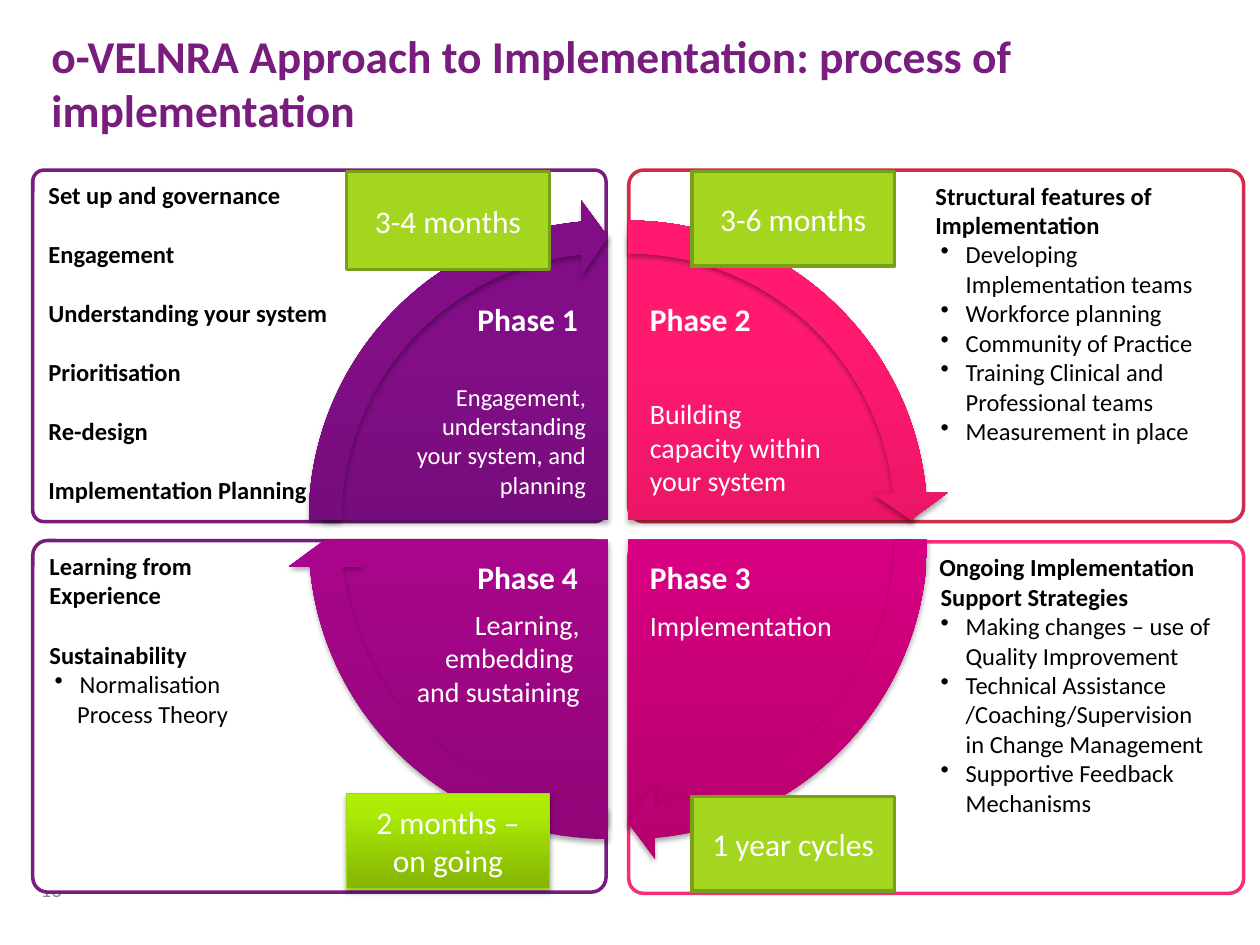
from dataclasses import dataclass
from pptx import Presentation
from pptx.dml.color import RGBColor
from pptx.enum.shapes import MSO_SHAPE as Preset
from pptx.enum.text import MSO_ANCHOR as Anchor, PP_ALIGN as Align
from pptx.oxml import parse_xml
from pptx.oxml.ns import nsdecls, qn
from pptx.util import Inches, Pt


@dataclass(frozen=True)
class Theme:
    font: str = "Calibri"
    purple: str = "781D7D"
    crimson: str = "CF2D47"
    pink: str = "F32F79"
    green: str = "A4D620"
    green_edge: str = "799E18"
    bright_edge: str = "A2D61B"
    bright: tuple = ("84B404", "ABEA05", "AEEF00")
    phases: tuple = (
        ("630B68", "810E87", "830C8A"),
        ("CB0D55", "FF1A70", "FF1B71"),
        ("B7006E", "ED008F", "EE008F"),
        ("8F0577", "BA079B", "BE049E"),
    )
    white: str = "FFFFFF"
    black: str = "000000"
    grey: str = "8C8C8C"
    title: int = 26
    heading: int = 18
    summary: int = 16
    body: int = 14
    small: int = 12


@dataclass(frozen=True)
class Line:
    text: str
    bold: bool = False
    margin: float = 0
    bullet: bool = False
    gap: int = 0


class Board:
    COLUMNS, ROWS = 100, 75

    def __init__(self, presentation, theme):
        self.theme = theme
        self.column = presentation.slide_width / self.COLUMNS
        self.row = presentation.slide_height / self.ROWS
        self.slide = presentation.slides.add_slide(presentation.slide_layouts[6])

    def place(self, box):
        left, top, width, height = box
        return (round(left * self.column), round(top * self.row),
                round(width * self.column), round(height * self.row))

    def style(self, paragraph, size, color, bold=False, align=Align.LEFT):
        font = paragraph.font
        font.name, font.size, font.bold = self.theme.font, Pt(size), bold
        font.color.rgb = RGBColor.from_string(color)
        paragraph.alignment = align

    def text(self, box, words, size, color, bold=False, align=Align.LEFT,
             wrap=True, anchor=Anchor.TOP):
        frame = self.slide.shapes.add_textbox(*self.place(box)).text_frame
        frame.word_wrap, frame.vertical_anchor = wrap, anchor
        frame.text = words
        self.style(frame.paragraphs[0], size, color, bold, align)

    def shape(self, preset, box, fill, edge=None, edge_width=2, adjustments=()):
        shape = self.slide.shapes.add_shape(preset, *self.place(box))
        for index, value in enumerate(adjustments):
            shape.adjustments[index] = value
        shape.shadow.inherit = False
        if isinstance(fill, tuple):
            self.glossy(shape, fill)
        else:
            shape.fill.solid()
            shape.fill.fore_color.rgb = RGBColor.from_string(fill)
        if edge:
            shape.line.color.rgb = RGBColor.from_string(edge)
            shape.line.width = Pt(edge_width)
        else:
            shape.line.fill.background()
        return shape

    def glossy(self, shape, colors):
        shape.fill.gradient()
        shape.fill.gradient_angle = 90
        properties = shape.element.spPr
        stops = properties.find(".//" + qn("a:gsLst"))
        stops.clear()
        for position, color in zip((0, 80, 100), colors):
            stops.append(parse_xml(
                f'<a:gs {nsdecls("a")} pos="{position * 1000}">'
                f'<a:srgbClr val="{color}"/></a:gs>'))
        properties.find(qn("a:effectLst")).append(parse_xml(
            f'<a:outerShdw {nsdecls("a")} blurRad="{Pt(3.1)}" dist="{Pt(1.8)}" '
            f'dir="5400000" rotWithShape="0"><a:srgbClr val="{self.theme.black}">'
            '<a:alpha val="35000"/></a:srgbClr></a:outerShdw>'))

    def panel(self, box, edge, corner, insets, lines):
        shape = self.shape(Preset.ROUNDED_RECTANGLE, box, self.theme.white, edge,
                           adjustments=(corner,))
        frame = shape.text_frame
        frame.word_wrap, frame.vertical_anchor = True, Anchor.TOP
        frame.margin_left, frame.margin_right = map(Inches, insets)
        for index, line in enumerate(lines):
            paragraph = frame.add_paragraph() if index else frame.paragraphs[0]
            paragraph.text = line.text
            paragraph.space_before = Pt(line.gap)
            self.style(paragraph, self.theme.body, self.theme.black, line.bold)
            properties = paragraph._p.get_or_add_pPr()
            properties.set("marL", str(Inches(line.margin)))
            properties.set("indent", str(Inches(-0.2 if line.bullet else 0)))
            if line.bullet:
                bullet = parse_xml(f'<a:buChar {nsdecls("a")} char="•"/>')
                properties.find(qn("a:defRPr")).addprevious(bullet)

    def wheel(self, left, top, gap, size, rim):
        quarter, head = 54, 3.275
        order = (1, 2, 3, 0)
        corners = [(left + gap * (phase in (1, 2)), top + gap * (phase in (2, 3)))
                   for phase in order]
        starts = [(108 + quarter * phase) % 216 for phase in order]
        for phase, (x, y), start in zip(order, corners, starts):
            self.shape(Preset.PIE, (x, y, size, size), self.theme.phases[phase],
                       adjustments=(start, (start + quarter) % 216))
        outer = size + 2 * rim
        for phase, (x, y), start in zip(order, corners, starts):
            self.shape(Preset.CIRCULAR_ARROW, (x - rim, y - rim, outer, outer),
                       self.theme.phases[phase],
                       adjustments=(0.051, head, start + quarter - head, start, 0.059))

    def duration(self, box, words, fill, edge, edge_width=2):
        shape = self.shape(Preset.RECTANGLE, box, fill, edge, edge_width)
        frame = shape.text_frame
        frame.word_wrap, frame.vertical_anchor = True, Anchor.MIDDLE
        frame.text = words
        self.style(frame.paragraphs[0], self.theme.heading, self.theme.white,
                   align=Align.CENTER)


def heads(*texts, margin=0, gap=0):
    return [Line(text, True, margin, gap=gap if index else 0)
            for index, text in enumerate(texts)]


def bullets(*texts, margin=0.55):
    return [Line(text, margin=margin, bullet=True) for text in texts]


def main():
    presentation = Presentation()
    presentation.slide_width, presentation.slide_height = Inches(10), Inches(7.5)
    theme = Theme()
    board = Board(presentation, theme)
    blank_line = 17
    left_insets, right_insets = (0.1, 0.63), (2.09, 0.2)

    board.text((1.2, 68.6, 4.7, 4), "16", theme.small, theme.grey,
               align=Align.RIGHT, anchor=Anchor.MIDDLE)
    board.panel((2.6, 42.9, 45.5, 27.9), theme.purple, 0.042, left_insets,
                heads("Learning from", "Experience")
                + [Line("Sustainability", True, gap=blank_line)]
                + bullets("Normalisation", margin=0.24)
                + [Line("Process Theory", margin=0.22)])
    board.panel((49.9, 43, 48.8, 27.9), theme.pink, 0.042, right_insets,
                heads("Ongoing Implementation", margin=0.34)
                + heads("Support Strategies", margin=0.35)
                + bullets("Making changes – use of Quality Improvement",
                          "Technical Assistance /Coaching/Supervision in Change Management",
                          "Supportive Feedback Mechanisms"))
    board.panel((49.9, 13.5, 48.8, 27.9), theme.crimson, 0.042, right_insets,
                heads("Structural features of Implementation", margin=0.31)
                + bullets("Developing Implementation teams", "Workforce planning",
                          "Community of Practice", "Training Clinical and Professional teams",
                          "Measurement in place"))
    board.panel((2.6, 13.5, 45.5, 27.9), theme.purple, 0.032, left_insets,
                heads("Set up and governance", "Engagement", "Understanding your system",
                      "Prioritisation", "Re-design", "Implementation Planning",
                      gap=blank_line))
    board.text((3.1, 1.7, 88.4, 9.9),
               "o-VELNRA Approach to Implementation: process of implementation",
               theme.title, theme.purple, bold=True)

    board.wheel(left=25.6, top=18.6, gap=1.6, size=45.3, rim=2.8)
    for number, left, top in ((1, 36.9, 23.3), (2, 50.6, 23.3),
                              (3, 50.6, 43.8), (4, 36.9, 43.8)):
        board.text((left, top, 10.1, 4), f"Phase {number}", theme.heading,
                   theme.white, bold=True, wrap=False)
    for box, words, size, align in (
        ((31.1, 29.8, 16.4, 10.4), "Engagement, understanding your system, and planning",
         theme.body, Align.RIGHT),
        ((30.6, 47.7, 16.4, 9.1), "Learning, embedding \vand sustaining",
         theme.summary, Align.RIGHT),
        ((50.6, 31, 16.1, 9.1), "Building capacity within your system",
         theme.summary, Align.LEFT),
        ((50.6, 47.8, 17.7, 3.7), "Implementation", theme.summary, Align.LEFT),
    ):
        board.text(box, words, size, theme.white, align=align)

    plain = (theme.green, theme.green_edge)
    board.duration((27.5, 13.6, 16.1, 7.8), "3-4 months", *plain)
    board.duration((54.9, 13.6, 16.1, 7.5), "3-6 months", *plain)
    board.duration((27.5, 63, 16.1, 7.5), "2 months – on going",
                   theme.bright, theme.bright_edge, 0.75)
    board.duration((54.9, 63.2, 16.1, 7.5), "1 year cycles", *plain)
    presentation.save("out.pptx")


if __name__ == "__main__":
    main()
